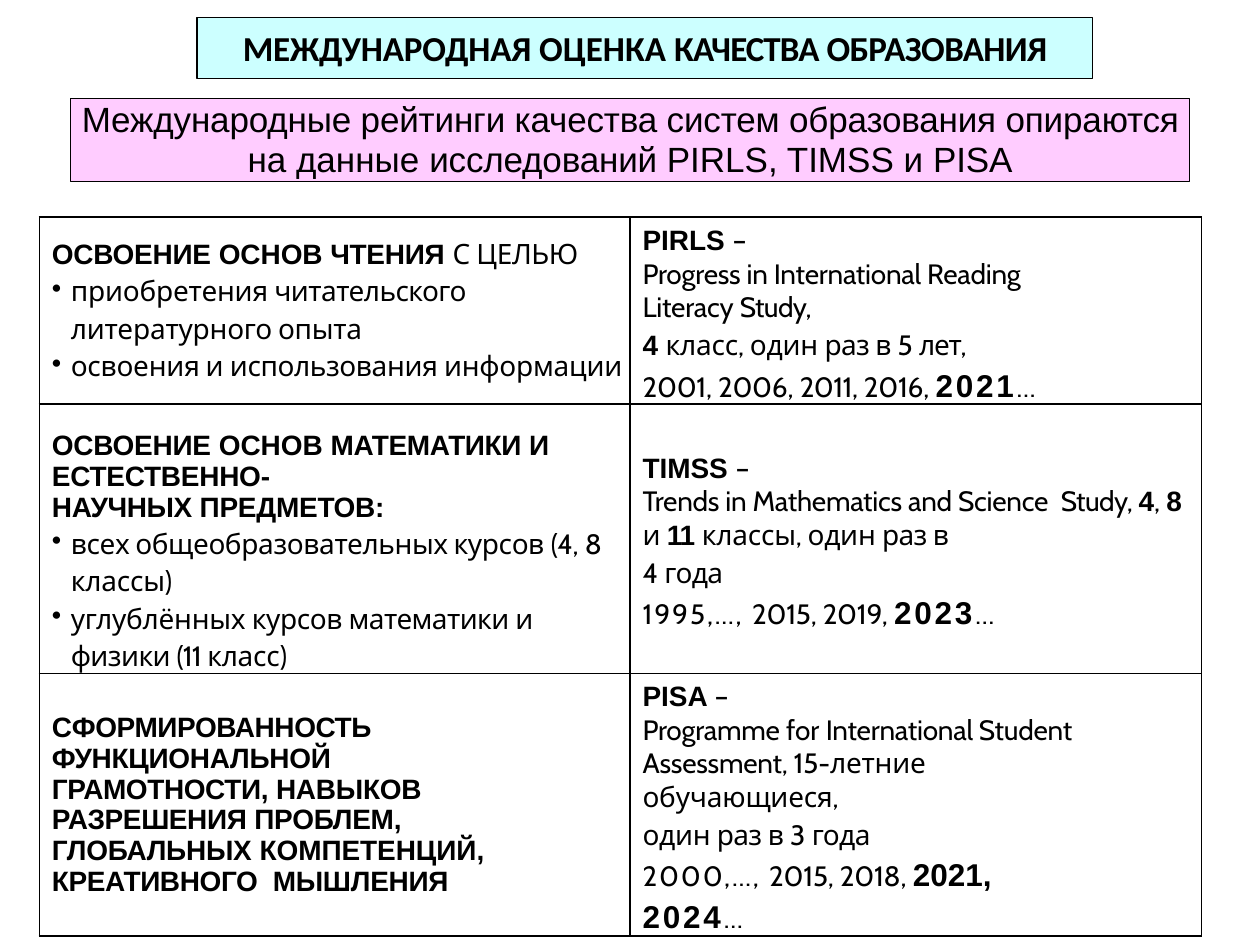
from lxml import etree
from pptx import Presentation
from pptx.dml.color import RGBColor
from pptx.enum import shapes, text
from pptx.oxml import ns
from pptx.util import Pt

BLACK = RGBColor(0x00, 0x00, 0x00)
CYAN = RGBColor(0xCC, 0xFF, 0xFF)
PINK = RGBColor(0xFF, 0xCC, 0xFF)

BOLD = dict(font="Arial", bold=True)
YEAR = dict(font="Arial", bold=True, size=18)
DASH = ("–", 4.7)
MORE = ("…", 1.6)
LEADING = Pt(21.4)
YEARS_LEADING = Pt(23.9)


def para(*runs, **layout):
    return runs, layout


READING_GOALS = [
    para(("ОСВОЕНИЕ ", -0.1, BOLD), ("ОСНОВ", 0, BOLD), (" ЧТЕНИЯ ", -0.1, BOLD),
         ("С ", 0), ("ЦЕЛЬЮ", -0.2)),
    para(("приобретения ", -0.1), ("читательского ", -0.3), ("литературного опыта", -0.1),
         bullet=True, leading=LEADING),
    para(("освоения и ", -0.1), ("использования ", -0.2), ("информации", -0.1),
         bullet=True, leading=LEADING),
]
PIRLS = [
    para(("PIRLS ", 0, BOLD), DASH, before=3.6),
    para(("Progress in International Reading", -0.1)),
    para(("Literacy ", -0.1), ("Study,", -0.3)),
    para(("4 ", -0.1, BOLD), ("класс, один ", -0.1), ("раз ", -0.4), ("в 5 ", 0), ("лет,", -0.7),
         leading=LEADING),
    para(("2001, 2006, ", -0.1), ("2011, ", -0.3), ("2016, ", -0.1), ("2021", 1.6, YEAR), MORE,
         leading=YEARS_LEADING),
]
SCIENCE_GOALS = [
    para(("ОСВОЕНИЕ", -0.1, BOLD), (" ОСНОВ ", 0, BOLD), ("МАТЕМАТИКИ ", -0.2, BOLD),
         ("И", 0, BOLD), (" ЕСТЕСТВЕННО-", -0.1, BOLD), before=15.2),
    para(("НАУЧНЫХ ", -0.2, BOLD), ("ПРЕДМЕТОВ:", -0.1, BOLD)),
    para(("всех общеобразовательных курсов ", -0.2), ("(4, 8 ", 0), ("классы)", -0.1),
         bullet=True, leading=LEADING),
    para(("углублённых ", -0.1), ("курсов ", -0.2), ("математики ", -0.3), ("и ", -0.1),
         ("физики ", -0.3), ("(11 ", -0.5), ("класс)", -0.1), bullet=True, leading=LEADING),
]
TIMSS = [
    para(("TIMSS ", 0, BOLD), DASH, before=3.1),
    para(("Trends in Mathematics and Science  ", -0.1), ("Study, ", -0.3), ("4", -0.1, BOLD),
         (", ", -0.1), ("8 ", -0.1, BOLD), ("и ", -0.1), ("11 ", -0.6, BOLD),
         ("классы, один ", -0.1), ("раз ", -0.4), ("в", 0), right=11),
    para(("4 ", 0), ("года", -0.3), leading=LEADING),
    para(("1995,…, ", 1.1), ("2015, 2019, ", -0.1), ("2023", 1.6, YEAR), MORE,
         leading=YEARS_LEADING),
]
LITERACY_GOALS = [
    para(("СФОРМИРОВАННОСТЬ ", -0.2, BOLD), ("ФУНКЦИОНАЛЬНОЙ", -0.1, BOLD)),
    para(("ГРАМОТНОСТИ, ", -0.2, BOLD), ("НАВЫКОВ ", -0.1, BOLD), ("РАЗРЕШЕНИЯ ", -0.2, BOLD),
         ("ПРОБЛЕМ,  ГЛОБАЛЬНЫХ ", -0.1, BOLD), ("КОМПЕТЕНЦИЙ, ", 0, BOLD),
         ("КРЕАТИВНОГО  ", -0.2, BOLD), ("МЫШЛЕНИЯ", -0.1, BOLD), leading=0.99, right=36),
]
PISA = [
    para(("PISA ", 0, BOLD), DASH, before=3.2),
    para(("Programme ", -0.1), ("for ", 0), ("International Student", -0.1)),
    para(("Assessment, 15-летние  обучающиеся,", -0.1), right=94),
    para(("один ", -0.1), ("раз ", -0.4), ("в 3 ", 0), ("года", -0.3), leading=LEADING),
    para(("2000,…, ", 1.1), ("2015, 2018, ", -0.1), ("2021, ", 0, YEAR), ("2024", 1.6, YEAR), MORE,
         leading=YEARS_LEADING, right=94),
]
STUDIES = [
    (107, (READING_GOALS, 0), (PIRLS, 3.6)),
    (154, (SCIENCE_GOALS, 15), (TIMSS, 3)),
    (150, (LITERACY_GOALS, 0), (PISA, 3)),
]


def add_text(paragraph, words, spacing=0, size=16, font="Cabin", bold=False):
    run = paragraph.add_run()
    run.text = words
    run.font.size = Pt(size)
    run.font.name = font
    run.font.bold = bold
    run.font.color.rgb = BLACK
    run.font._element.set("spc", str(round(spacing * 100)))


def set_indents(paragraph, right=0, bullet=False):
    props = paragraph._p.get_or_add_pPr()
    props.set("marL", str(Pt(18 if bullet else 7.2)))
    props.set("indent", str(Pt(-10.8 if bullet else 0)))
    props.set("marR", str(Pt(right)))
    if bullet:
        etree.SubElement(props, ns.qn("a:buChar")).set("char", "•")


def fill_cell(cell, paragraphs, top):
    cell.fill.background()
    cell.vertical_anchor = text.MSO_ANCHOR.MIDDLE
    cell.margin_left = cell.margin_right = cell.margin_bottom = 0
    cell.margin_top = Pt(top)
    frame = cell.text_frame
    for index, (runs, layout) in enumerate(paragraphs):
        paragraph = frame.add_paragraph() if index else frame.paragraphs[0]
        paragraph.space_before = Pt(layout.get("before", 0))
        if "leading" in layout:
            paragraph.line_spacing = layout["leading"]
        set_indents(paragraph, layout.get("right", 0), layout.get("bullet", False))
        for words, spacing, *look in runs:
            add_text(paragraph, words, spacing, **(look[0] if look else {}))
    props = cell._tc.get_or_add_tcPr()
    for index, side in enumerate(("lnL", "lnR", "lnT", "lnB")):
        border = etree.Element(ns.qn("a:" + side), w=str(Pt(1)))
        solid = etree.SubElement(border, ns.qn("a:solidFill"))
        etree.SubElement(solid, ns.qn("a:srgbClr")).set("val", str(BLACK))
        props.insert(index, border)


def style_banner(banner, box, color):
    banner.left, banner.top, banner.width, banner.height = map(Pt, box)
    banner.fill.solid()
    banner.fill.fore_color.rgb = color
    banner.line.color.rgb = BLACK
    banner.line.width = Pt(0.75)
    frame = banner.text_frame
    frame.word_wrap = True
    frame.auto_size = text.MSO_AUTO_SIZE.NONE
    frame.vertical_anchor = text.MSO_ANCHOR.MIDDLE
    frame.paragraphs[0].alignment = text.PP_ALIGN.CENTER
    return frame


def place_title(slide, box):
    title = slide.shapes.title
    frame = style_banner(title, box, CYAN)
    outline = etree.Element(ns.qn("a:prstGeom"), prst="roundRect")
    etree.SubElement(outline, ns.qn("a:avLst"))
    title._element.spPr.find(ns.qn("a:xfrm")).addnext(outline)
    for words, spacing in (("МЕЖДУНАРОДНАЯ ", -0.1), ("ОЦЕНКА ", 0),
                           ("КАЧЕСТВА ", -0.5), ("ОБРАЗОВАНИЯ", -0.4)):
        add_text(frame.paragraphs[0], words, spacing, size=20, font="Calibri", bold=True)


def place_summary(slide, box):
    summary = slide.shapes.add_shape(shapes.MSO_SHAPE.RECTANGLE, *map(Pt, box))
    summary.shadow.inherit = False
    frame = style_banner(summary, box, PINK)
    frame.margin_left = frame.margin_right = frame.margin_top = frame.margin_bottom = 0
    paragraph = frame.paragraphs[0]
    paragraph.line_spacing = Pt(22.8)
    for words, spacing in (("Международные рейтинги качества систем образования опираются ", -0.1),
                           ("на данные ", 0), ("исследований ", -0.1),
                           ("PIRLS, TIMSS и ", 0), ("PISA", -0.1)):
        add_text(paragraph, words, spacing, size=20, font="Arial")


def place_studies(slide, box, goals_width):
    table = slide.shapes.add_table(len(STUDIES), 2, *map(Pt, box)).table
    table.first_row = table.horz_banding = False
    table.columns[0].width = Pt(goals_width)
    table.columns[1].width = Pt(box[2] - goals_width)
    for row, (height, *cells) in enumerate(STUDIES):
        table.rows[row].height = Pt(height)
        for column, (paragraphs, top) in enumerate(cells):
            fill_cell(table.cell(row, column), paragraphs, top)


def main():
    deck = Presentation()
    deck.slide_width, deck.slide_height = Pt(720), Pt(540)
    slide = deck.slides.add_slide(deck.slide_layouts[5])
    place_studies(slide, (22.5, 124, 664, 411), 337.5)
    place_title(slide, (112.5, 10, 512, 34.8))
    place_summary(slide, (40.3, 56.2, 639.4, 47.5))
    deck.save("out.pptx")


if __name__ == "__main__":
    main()
